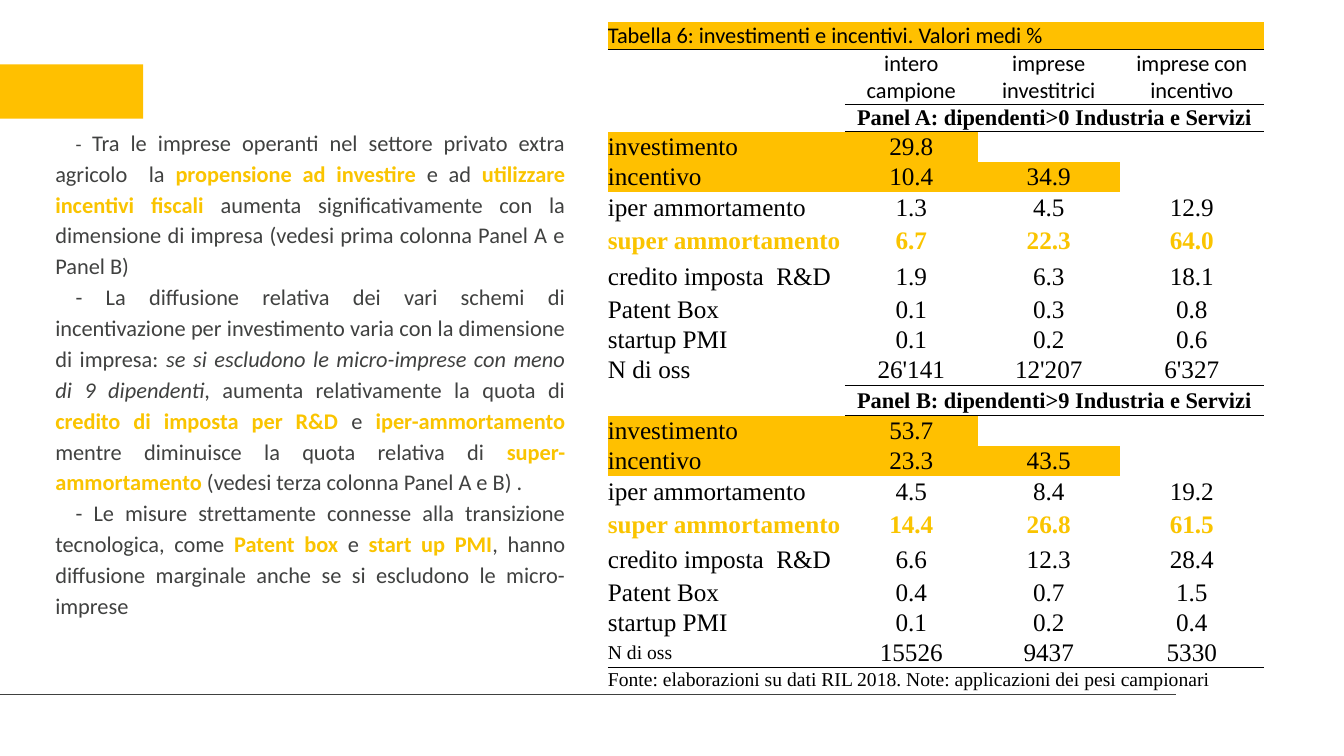
from dataclasses import dataclass
from lxml.etree import SubElement
from pptx import Presentation
from pptx.dml.color import RGBColor as Rgb
from pptx.enum.shapes import MSO_CONNECTOR as Connector, MSO_SHAPE as Shape
from pptx.enum.text import MSO_ANCHOR as Anchor, MSO_AUTO_SIZE as AutoSize, PP_ALIGN as Align
from pptx.oxml.ns import qn
from pptx.util import Cm, Pt


@dataclass(frozen=True)
class Theme:
    band: str = "FFC000"
    accent: str = "FAC400"
    grey: str = "404140"
    black: str = "000000"
    sans: str = "Calibri"
    serif: str = "Times New Roman"
    small: int = 14
    text: int = 16
    figures: int = 18


theme = Theme()


def add_text(paragraph, text, font=theme.sans, size=theme.text, color=theme.black,
             bold=False, italic=False):
    run = paragraph.add_run()
    run.text = text
    run.font.name, run.font.size = font, Pt(size)
    run.font.bold, run.font.italic = bold, italic
    run.font.color.rgb = Rgb.from_string(color)


def set_border(cell, side, ruled):
    line = SubElement(cell._tc.get_or_add_tcPr(), qn(f"a:{side}"), w="6350")
    if ruled:
        fill = SubElement(line, qn("a:solidFill"))
        SubElement(fill, qn("a:srgbClr"), val=theme.black)
    else:
        SubElement(line, qn("a:noFill"))


deck = Presentation()
deck.slide_width, deck.slide_height = Cm(33.87), Cm(19.05)
slide = deck.slides.add_slide(deck.slide_layouts[1])
title = slide.shapes.title.element
title.getparent().remove(title)

# Side band and footer rule
band = slide.shapes.add_shape(Shape.RECTANGLE, 0, Cm(1.62), Cm(3.61), Cm(1.37))
band.shadow.inherit = False
band.fill.solid()
band.fill.fore_color.rgb = Rgb.from_string(theme.band)
band.line.fill.background()

footer_rule = slide.shapes.add_connector(Connector.STRAIGHT, 0, Cm(17.5), Cm(29.64), Cm(17.5))
footer_rule.line.color.rgb = Rgb.from_string(theme.grey)
footer_rule.line.width = Pt(1)
SubElement(footer_rule.element.spPr, qn("a:effectLst"))

# Commentary
plain = {"color": theme.grey}
dash = plain | {"size": theme.small}
key = {"color": theme.accent, "bold": True}
aside = plain | {"italic": True}
findings = [
    [("- ", dash),
     ("Tra le imprese operanti nel settore privato extra agricolo  la ", plain),
     ("propensione ad investire ", key), ("e ad ", plain),
     ("utilizzare incentivi fiscali ", key),
     ("aumenta significativamente con la dimensione di impresa "
      "(vedesi prima colonna Panel A e Panel B)", plain)],
    [("- La diffusione relativa dei vari schemi di incentivazione per investimento "
      "varia con la dimensione di impresa: ", plain),
     ("se si escludono le micro-imprese con meno di 9 dipendenti", aside),
     (", aumenta relativamente la quota di ", plain),
     ("credito di imposta per R&D ", key), ("e ", plain), ("iper-ammortamento", key),
     (" mentre diminuisce la quota relativa di ", plain), ("super-ammortamento", key),
     (" (vedesi terza colonna Panel A e B) .", plain)],
    [("- Le misure strettamente connesse alla transizione tecnologica, come ", plain),
     ("Patent box ", key), ("e ", plain), ("start up PMI", key),
     (", hanno diffusione marginale anche se si escludono le micro-imprese", plain)],
]
commentary = slide.placeholders[1]
commentary.left, commentary.top = Cm(1.14), Cm(3.02)
commentary.width, commentary.height = Cm(13.36), Cm(12.85)
commentary.text_frame.auto_size = AutoSize.NONE
for number, finding in enumerate(findings):
    frame = commentary.text_frame
    paragraph = frame.add_paragraph() if number else frame.paragraphs[0]
    paragraph.alignment, paragraph.line_spacing = Align.JUSTIFY, 1.15
    paragraph.space_before = paragraph.space_after = Pt(0)
    properties = paragraph._p.get_or_add_pPr()
    properties.set("marL", "0")
    properties.set("indent", str(Cm(0.51)))
    SubElement(properties, qn("a:buNone"))
    for text, look in finding:
        add_text(paragraph, text, **look)

# Table contents
measures = ["investimento", "incentivo", "iper ammortamento", "super ammortamento",
            "credito imposta  R&D", "Patent Box", "startup PMI", "N di oss"]
panel_a = [["29.8", "", ""], ["10.4", "34.9", ""], ["1.3", "4.5", "12.9"],
           ["6.7", "22.3", "64.0"], ["1.9", "6.3", "18.1"], ["0.1", "0.3", "0.8"],
           ["0.1", "0.2", "0.6"], ["26'141", "12'207", "6'327"]]
panel_b = [["53.7", "", ""], ["23.3", "43.5", ""], ["4.5", "8.4", "19.2"],
           ["14.4", "26.8", "61.5"], ["6.6", "12.3", "28.4"], ["0.4", "0.7", "1.5"],
           ["0.1", "0.2", "0.4"], ["15526", "9437", "5330"]]
rows = [
    ["Tabella 6: investimenti e incentivi. Valori medi %", "", "", ""],
    ["", "intero campione", "imprese investitrici", "imprese con incentivo"],
    ["", "Panel A: dipendenti>0 Industria e Servizi", "", ""],
    *[[name, *values] for name, values in zip(measures, panel_a)],
    ["", "Panel B: dipendenti>9 Industria e Servizi", "", ""],
    *[[name, *values] for name, values in zip(measures, panel_b)],
    ["Fonte: elaborazioni su dati RIL 2018. Note: applicazioni dei pesi campionari", "", "", ""],
]
last = len(rows) - 1
panel_rows = (2, 11)
ruled_from = {0: 0, 1: 1, 2: 1, 10: 1, 11: 1, last - 1: 0}
heights = [0.69, 1.36, 0.69,
           0.76, 0.76, 0.81, 0.86, 0.92, 0.76, 0.76, 0.76, 0.76,
           0.76, 0.76, 0.81, 0.84, 0.92, 0.76, 0.76, 0.74, 0.6]
widths = [5.97, 3.35, 3.58, 3.63]

# Table grid
incentives_frame = slide.shapes.add_table(len(rows), len(widths), Cm(15.32), Cm(0.56),
                                          Cm(sum(widths)), Cm(sum(heights)))
no_style = "{2D5ABB26-0587-4C30-8999-92F81FD0307C}"
incentives_frame.element.find(".//" + qn("a:tableStyleId")).text = no_style
incentives = incentives_frame.table
incentives.first_row = incentives.horz_banding = False
for column, width in zip(incentives.columns, widths):
    column.width = Cm(width)
for row, height in zip(incentives.rows, heights):
    row.height = Cm(height)
for r, first in ((0, 0), (2, 1), (11, 1), (last, 0)):
    incentives.cell(r, first).merge(incentives.cell(r, 3))

# Table cells
for r, row in enumerate(rows):
    for c, text in enumerate(row):
        cell = incentives.cell(r, c)
        cell.margin_left = cell.margin_right = cell.margin_top = cell.margin_bottom = 0
        cell.vertical_anchor = Anchor.MIDDLE
        set_border(cell, "lnL", False)
        set_border(cell, "lnR", False)
        set_border(cell, "lnT", c >= ruled_from.get(r - 1, 4))
        set_border(cell, "lnB", c >= ruled_from.get(r, 4))
        if r == 0 or (text and row[0] in measures[:2]):
            cell.fill.solid()
            cell.fill.fore_color.rgb = Rgb.from_string(theme.band)
        else:
            cell.fill.background()

        paragraph = cell.text_frame.paragraphs[0]
        paragraph.alignment = Align.CENTER if c else Align.LEFT
        if not text:
            SubElement(paragraph._p, qn("a:endParaRPr"), sz=str(theme.small * 100))
            continue
        highlighted = row[0] == "super ammortamento"
        if r == last or (r == last - 1 and c == 0):
            size = theme.small
        else:
            size = theme.text if r < 2 or r in panel_rows else theme.figures
        add_text(paragraph, text, size=size,
                 font=theme.sans if r < 2 else theme.serif,
                 color=theme.accent if highlighted else theme.black,
                 bold=highlighted or r in panel_rows)

deck.save("out.pptx")
